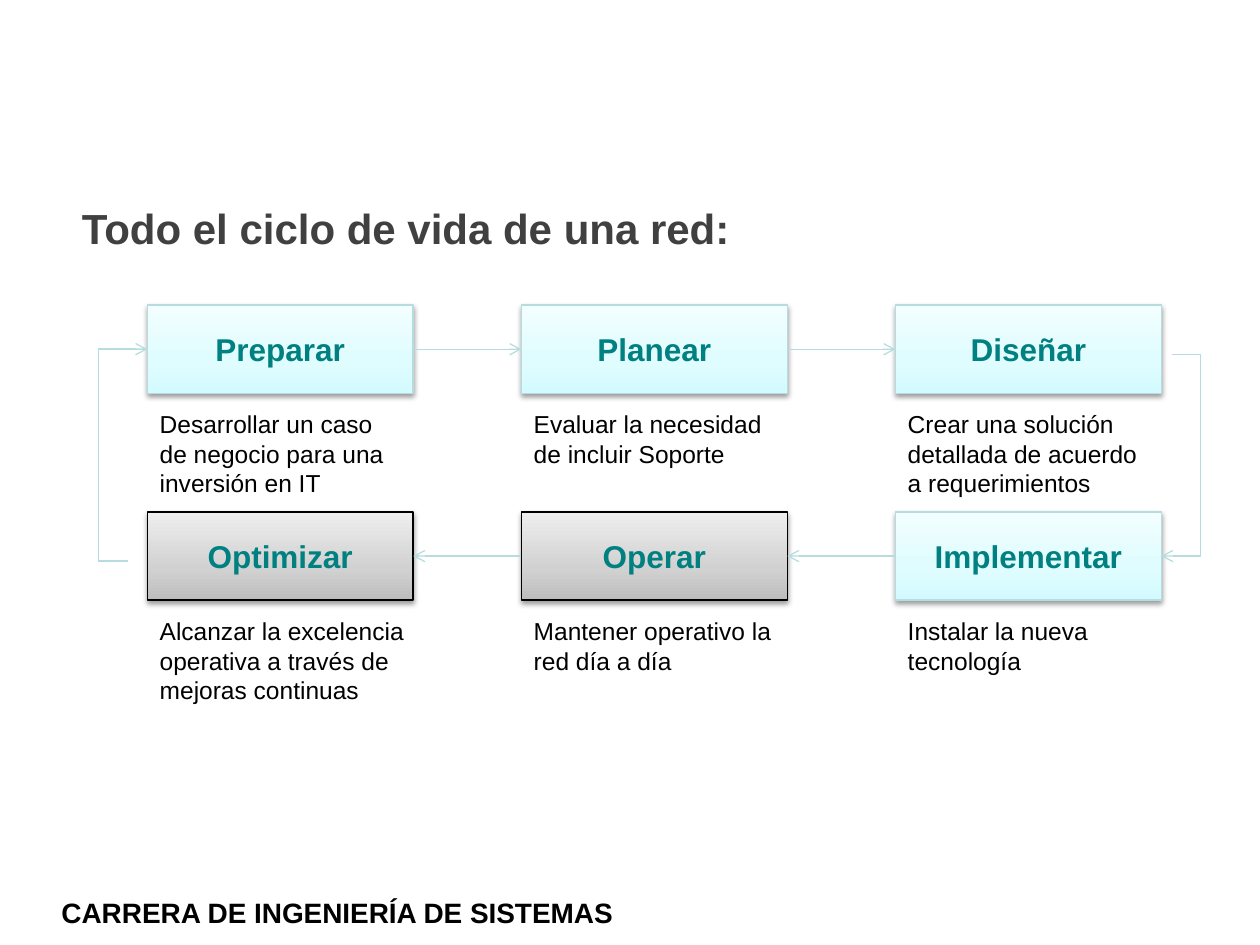
"""Network life cycle slide: six stages joined in a loop."""
from copy import deepcopy
from dataclasses import dataclass

from lxml import etree
from pptx import Presentation
from pptx import util as u
from pptx.dml.color import RGBColor
from pptx.enum import shapes, text
from pptx.oxml.ns import qn


@dataclass(frozen=True)
class Theme:
    font: str = "Arial"
    ink: str = "000000"
    heading: str = "404040"
    stage: str = "008080"
    line: str = "B6DCDF"
    aqua: tuple = ("D3FBFF", "DFFCFF", "F2FEFF")
    gray: tuple = ("BDBDBD", "D1D1D1", "EEEEEE")
    stops: tuple = (0, 0.35, 1)
    title_size: int = 24
    stage_size: int = 18
    footer_size: int = 16
    body_size: int = 14
    line_width: float = 0.75


class Deck:
    def __init__(self, theme):
        self.theme = theme
        self.prs = Presentation()
        self.prs.slide_width, self.prs.slide_height = u.Cm(25.4), u.Cm(19.05)
        self.s = self.prs.slides.add_slide(self.prs.slide_layouts[6])

    def fill_text(self, tf, words, size, color, bold=False, align=None):
        p = tf.paragraphs[0]
        p.alignment = align
        r = p.add_run()
        r.text = words
        fmt = {"name": self.theme.font, "size": u.Pt(size), "bold": bold}
        for key, value in fmt.items():
            setattr(r.font, key, value)
        r.font.color.rgb = RGBColor.from_string(color)

    def stroke(self, sp, color):
        sp.line.color.rgb = RGBColor.from_string(color)
        sp.line.width = u.Pt(self.theme.line_width)

    def label(self, x, y, w, h, words, size, color, bold=False, wrap=True):
        sp = self.s.shapes.add_textbox(*map(u.Cm, (x, y, w, h)))
        fmt = {"word_wrap": wrap, "auto_size": text.MSO_AUTO_SIZE.SHAPE_TO_FIT_TEXT}
        for key, value in fmt.items():
            setattr(sp.text_frame, key, value)
        self.fill_text(sp.text_frame, words, size, color, bold)

    def shade(self, sp, colors):
        sp.fill.gradient()
        sp.fill.gradient_angle = 90
        stop_list = sp._element.spPr.find(".//" + qn("a:gsLst"))
        stop_list.append(deepcopy(stop_list[0]))
        for stop, position, color in zip(sp.fill.gradient_stops, self.theme.stops, colors):
            stop.position = position
            stop.color.rgb = RGBColor.from_string(color)

    def shadow(self, sp):
        sp.shadow.inherit = False
        effects = sp._element.spPr.find(qn("a:effectLst"))
        outer = etree.SubElement(effects, qn("a:outerShdw"), blurRad="40000",
                                 dist="20000", dir="5400000", rotWithShape="0")
        color = etree.SubElement(outer, qn("a:srgbClr"), val=self.theme.ink)
        etree.SubElement(color, qn("a:alpha"), val="38000")

    def box(self, x, y, w, h, words, colors, border):
        sp = self.s.shapes.add_shape(shapes.MSO_SHAPE.RECTANGLE, *map(u.Cm, (x, y, w, h)))
        self.shade(sp, colors)
        self.stroke(sp, border)
        self.shadow(sp)
        sp.text_frame.vertical_anchor = text.MSO_ANCHOR.MIDDLE
        self.fill_text(sp.text_frame, words, self.theme.stage_size, self.theme.stage,
                       True, text.PP_ALIGN.CENTER)
        return sp

    def connector(self, kind, x1, y1, x2, y2, arrow=True):
        sp = self.s.shapes.add_connector(kind, *map(u.Cm, (x1, y1, x2, y2)))
        self.stroke(sp, self.theme.line)
        props = sp._element.spPr
        if arrow:
            etree.SubElement(props.find(qn("a:ln")), qn("a:tailEnd"), type="arrow")
        etree.SubElement(props, qn("a:effectLst"))
        return sp

    def line(self, x1, y1, x2, y2):
        self.connector(shapes.MSO_CONNECTOR.STRAIGHT, x1, y1, x2, y2, arrow=False)

    def join(self, start, start_site, end, end_site):
        sp = self.connector(shapes.MSO_CONNECTOR.STRAIGHT, 0, 0, 1, 1)
        sp.begin_connect(start, start_site)
        sp.end_connect(end, end_site)

    def elbow(self, x1, y1, x2, y2):
        cx, cy, dx, dy = (x1 + x2) / 2, (y1 + y2) / 2, (x2 - x1) / 2, (y2 - y1) / 2
        sp = self.connector(shapes.MSO_CONNECTOR.ELBOW, cx - dy, cy + dx, cx + dy, cy - dx)
        props = sp._element.spPr
        props.find(qn("a:xfrm")).set("rot", "5400000")
        props.find(qn("a:prstGeom")).set("prst", "bentConnector2")


def main():
    theme = Theme()
    deck = Deck(theme)
    left, top, width, height = 2.97, 6.15, 5.36, 1.78
    column_step, row_step, text_drop = 7.54, 4.17, 1.98
    aqua, gray = (theme.aqua, theme.line), (theme.gray, theme.ink)
    rows = [
        [("Preparar", "Desarrollar un caso de negocio para una inversión en IT", aqua, width),
         ("Planear", "Evaluar la necesidad de incluir Soporte", aqua, width),
         ("Diseñar", "Crear una solución detallada de acuerdo a requerimientos", aqua, width)],
        [("Optimizar", "Alcanzar la excelencia operativa a través de mejoras continuas", gray, 6.35),
         ("Operar", "Mantener operativo la red día a día", gray, width),
         ("Implementar", "Instalar la nueva tecnología", aqua, width)],
    ]

    deck.label(0.99, 17.93, 12.9, 0.94, "CARRERA DE INGENIERÍA DE SISTEMAS",
               theme.footer_size, theme.ink, bold=True)
    deck.label(1.4, 3.96, 14.07, 1.27, "Todo el ciclo de vida de una red:",
               theme.title_size, theme.heading, bold=True, wrap=False)

    stages = []
    for i, row in enumerate(rows):
        y = top + i * row_step
        for j, (name, detail, style, detail_width) in enumerate(row):
            x = left + j * column_step
            stages.append(deck.box(x, y, width, height, name, *style))
            deck.label(x, y + text_drop, detail_width, 1.45, detail,
                       theme.body_size, theme.ink)

    preparar, planear, disenar, optimizar, operar, implementar = stages
    for start, end in ((preparar, planear), (planear, disenar)):
        deck.join(start, 3, end, 1)
    for start, end in ((implementar, operar), (operar, optimizar)):
        deck.join(start, 1, end, 3)

    right = left + 2 * column_step + width
    upper = top + height / 2
    lower = upper + row_step
    loop_left, loop_right, offset = 1.98, 24.2, 0.1
    deck.elbow(loop_right, upper + offset, right, lower)
    deck.elbow(loop_left, lower + offset, left, upper)
    deck.line(loop_right, upper + offset, 23.62, upper + offset)
    deck.line(2.59, lower + offset, loop_left, lower + offset)
    deck.prs.save("out.pptx")


if __name__ == "__main__":
    main()
